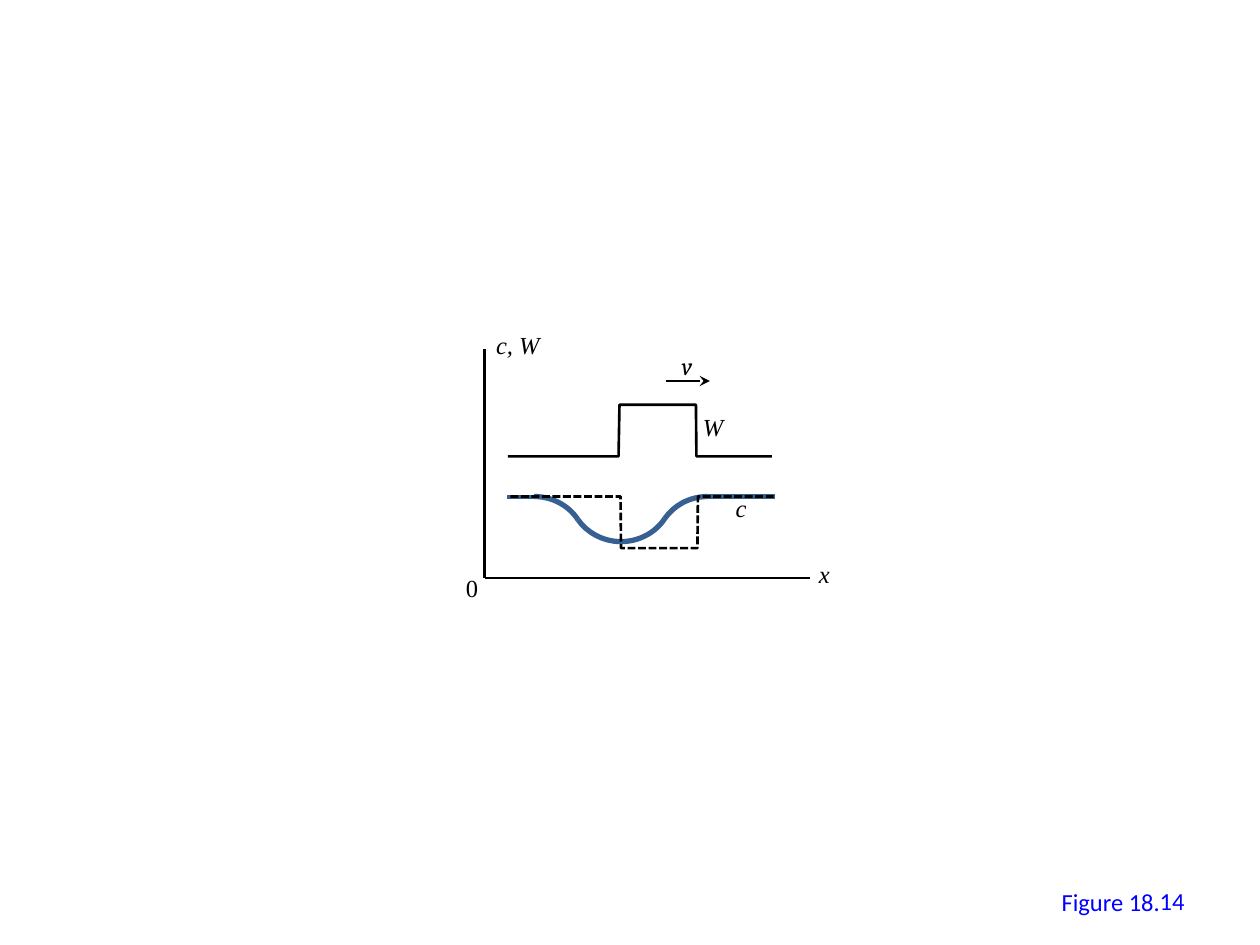
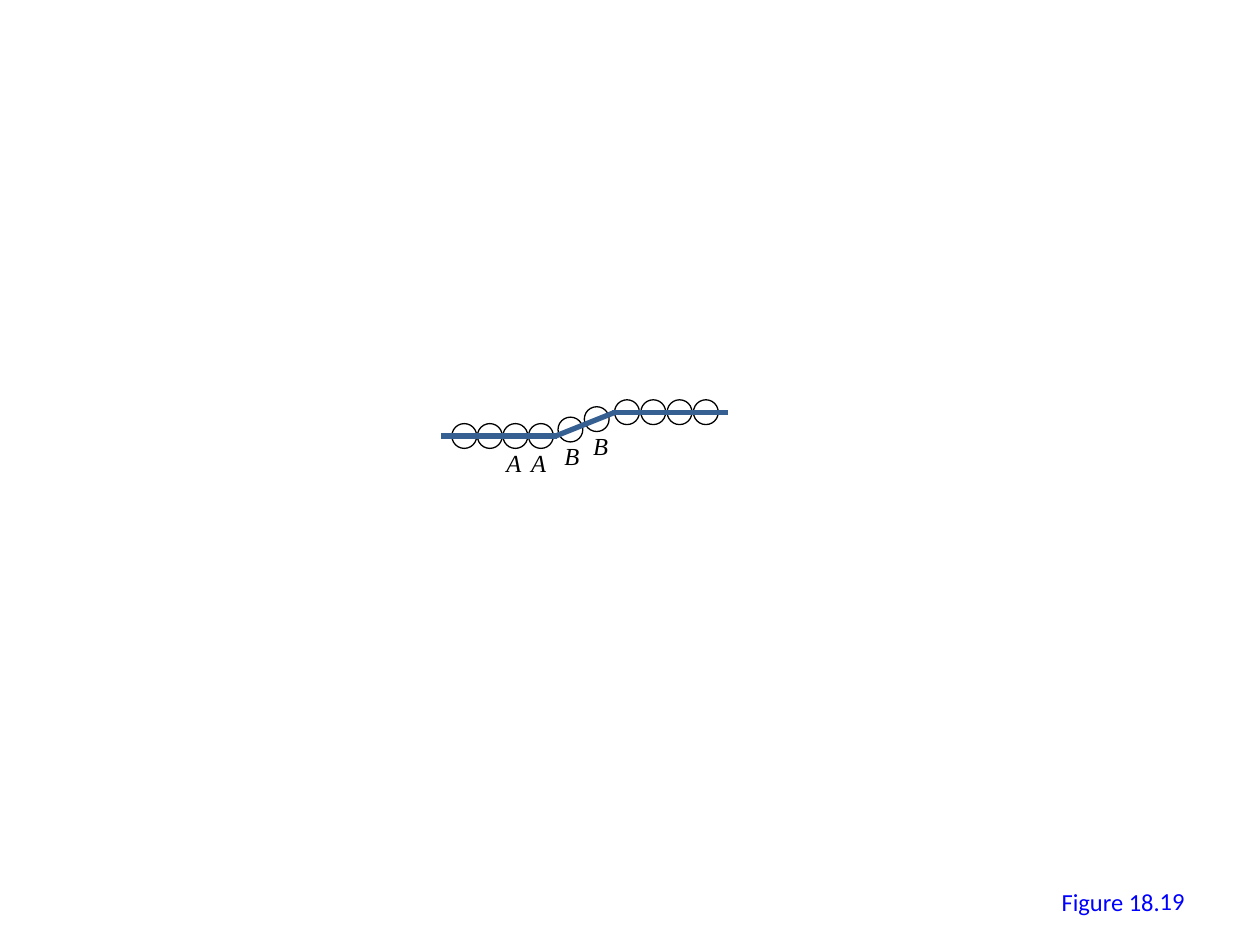
from lxml import etree
from pptx import Presentation
from pptx.dml.color import RGBColor
from pptx.enum.dml import MSO_LINE
from pptx.enum.shapes import MSO_CONNECTOR, MSO_SHAPE
from pptx.enum.text import MSO_ANCHOR, MSO_AUTO_SIZE, PP_ALIGN
from pptx.oxml.ns import qn
from pptx.util import Cm, Pt

STRAIGHT = MSO_CONNECTOR.STRAIGHT
ARC, OVAL = MSO_SHAPE.ARC, MSO_SHAPE.OVAL
SYS_DASH = MSO_LINE.SQUARE_DOT
LEFT, RIGHT = PP_ALIGN.LEFT, PP_ALIGN.RIGHT
MIDDLE = MSO_ANCHOR.MIDDLE
FIT_TEXT = MSO_AUTO_SIZE.SHAPE_TO_FIT_TEXT

BLACK = RGBColor(0x00, 0x00, 0x00)
BLUE = RGBColor(0x00, 0x00, 0xFF)
STEEL = RGBColor(0x37, 0x60, 0x92)
SERIF, SANS, MATH = "Times New Roman", "Calibri", "Cambria"
TEXT_SIZE = Pt(14)
LABEL_H = 0.86
BLANK_LAYOUT = 6
FOOTER_LEFT, FOOTER_TOP = 18.21, 17.65


class Region:
    """A box on a slide; all lengths are centimetres from its top left corner."""

    def __init__(self, slide, left, top):
        self.shapes = slide.shapes
        self.left, self.top = left, top

    def at(self, x, y):
        return Cm(self.left + x), Cm(self.top + y)

    def text(self, text, x, y, w, h=LABEL_H, font=SERIF, color=BLACK,
             italic=True, align=LEFT, wrap=False):
        tf = self.shapes.add_textbox(*self.at(x, y), Cm(w), Cm(h)).text_frame
        tf.text = text
        tf.word_wrap = wrap
        if wrap:
            tf.vertical_anchor = MIDDLE
        else:
            tf.auto_size = FIT_TEXT
        p = tf.paragraphs[0]
        p.alignment = align
        r = p.runs[0]
        r.font.name, r.font.size, r.font.italic = font, TEXT_SIZE, italic
        r.font.color.rgb = color

    def line(self, start, end, color=BLACK, width=1.5, arrow=False):
        cxn = self.shapes.add_connector(STRAIGHT, *self.at(*start), *self.at(*end))
        cxn.line.color.rgb = color
        cxn.line.width = Pt(width)
        sp_pr = cxn._element.spPr
        if arrow:
            etree.SubElement(sp_pr.find(qn("a:ln")), qn("a:tailEnd"), type="stealth")
        etree.SubElement(sp_pr, qn("a:effectLst"))

    def outline(self, sp, color, width):
        sp.shadow.inherit = False
        sp.fill.background()
        sp.line.color.rgb = color
        sp.line.width = Pt(width)
        return sp

    def shape(self, kind, x, y, w, h, color=BLACK, width=0.75):
        sp = self.shapes.add_shape(kind, *self.at(x, y), Cm(w), Cm(h))
        return self.outline(sp, color, width)

    def polyline(self, points):
        first, *rest = [self.at(*point) for point in points]
        builder = self.shapes.build_freeform(*first)
        builder.add_line_segments(rest, close=False)
        return self.outline(builder.convert_to_shape(), BLACK, 1.5)


def add_figure_caption(slide):
    footer = Region(slide, FOOTER_LEFT, FOOTER_TOP)
    footer.text("Figure 18.", 2.94, 0.1, 2.51, font=SANS, color=BLUE, italic=False)


def add_figure_number(slide, number):
    footer = Region(slide, FOOTER_LEFT, FOOTER_TOP)
    footer.text(number, 0, 0, 5.92, 1.02, font=SANS, color=BLUE, italic=False,
                align=RIGHT, wrap=True)


def add_profile_plot(slide, left, top):
    plot = Region(slide, left, top)
    width, height = 6.55, 4.61

    # Axes
    plot.line((-0.01, height), (width, height))
    plot.line((-0.01, height), (-0.01, 0))
    plot.text("c, W", -0.03, -0.51, 1.52)
    plot.text("x", 6.48, 4.11, 0.86)
    plot.text("0", -0.64, 4.39, 0.76, italic=False)

    # Potential W: a rectangular barrier
    base, crest = 2.16, 1.12
    plot.polyline([(0.46, base), (2.69, base), (2.71, crest),
                   (4.25, crest), (4.26, base), (5.78, base)])

    # Concentration c: smooth dip, then the dashed step
    level, floor = 2.97, 4.01
    arc_w, arc_h, pitch = 2.08, 1.98, 1.75
    plot.line((1.02, level), (0.45, level), STEEL, 2.25)
    arcs = [(1.9, 30.5, 147.7), (level, 212.3, 270), (level, 270, 329.5)]
    for column, (y, start, end) in zip((1, 2, 0), arcs):
        sp = plot.shape(ARC, column * pitch - 0.05, y, arc_w, arc_h, STEEL, 3)
        # Adjustments count 60000ths of a degree in units of 100000
        sp.adjustments[0], sp.adjustments[1] = start * 0.6, end * 0.6
    plot.line((5.84, level), (4.47, level), STEEL, 3)
    step = plot.polyline([(0.51, level), (2.73, level), (2.74, floor),
                          (4.28, floor), (4.29, level), (5.82, level)])
    step.line.dash_style = SYS_DASH

    # Curve labels and velocity arrow
    plot.text("W", 4.14, 1.14, 1.07)
    plot.text("c", 4.8, 2.77, 0.86)
    plot.line((3.64, 0.64), (4.53, 0.64), arrow=True)
    plot.text("v", 3.71, -0.08, 0.89, font=MATH)


def add_atom_chain(slide, left, top):
    chain = Region(slide, left, top)
    size, low, high = 0.5, 0.74, 0.26

    # Atoms: lower row, two on the slope, upper row
    atoms = [(0.22 + 0.515 * i, low - size / 2) for i in range(4)]
    atoms += [(2.36, 0.36), (2.89, 0.15)]
    atoms += [(3.5 + 0.53 * i, high - size / 2) for i in range(4)]
    for x, y in atoms:
        chain.shape(OVAL, x, y, size, size)

    # Kinked line through the chain
    for start, end in [((0, low), (2.34, low)), ((3.45, high), (5.79, high)),
                       ((3.51, high), (2.31, low))]:
        chain.line(start, end, STEEL, 3)

    # Atom labels
    for name, x, y in [("A", 1.07, 0.86), ("A", 1.57, 0.86),
                       ("B", 2.24, 0.71), ("B", 2.82, 0.51)]:
        chain.text(name, x, y, 0.94)


def main():
    prs = Presentation()
    prs.slide_width, prs.slide_height = Cm(25.4), Cm(19.05)
    figures = [("14", add_profile_plot, 9.78, 7.04),
               ("19", add_atom_chain, 8.89, 8.05)]
    for number, draw, left, top in figures:
        slide = prs.slides.add_slide(prs.slide_layouts[BLANK_LAYOUT])
        add_figure_caption(slide)
        draw(slide, left, top)
        add_figure_number(slide, number)
    prs.save("out.pptx")


if __name__ == "__main__":
    main()
